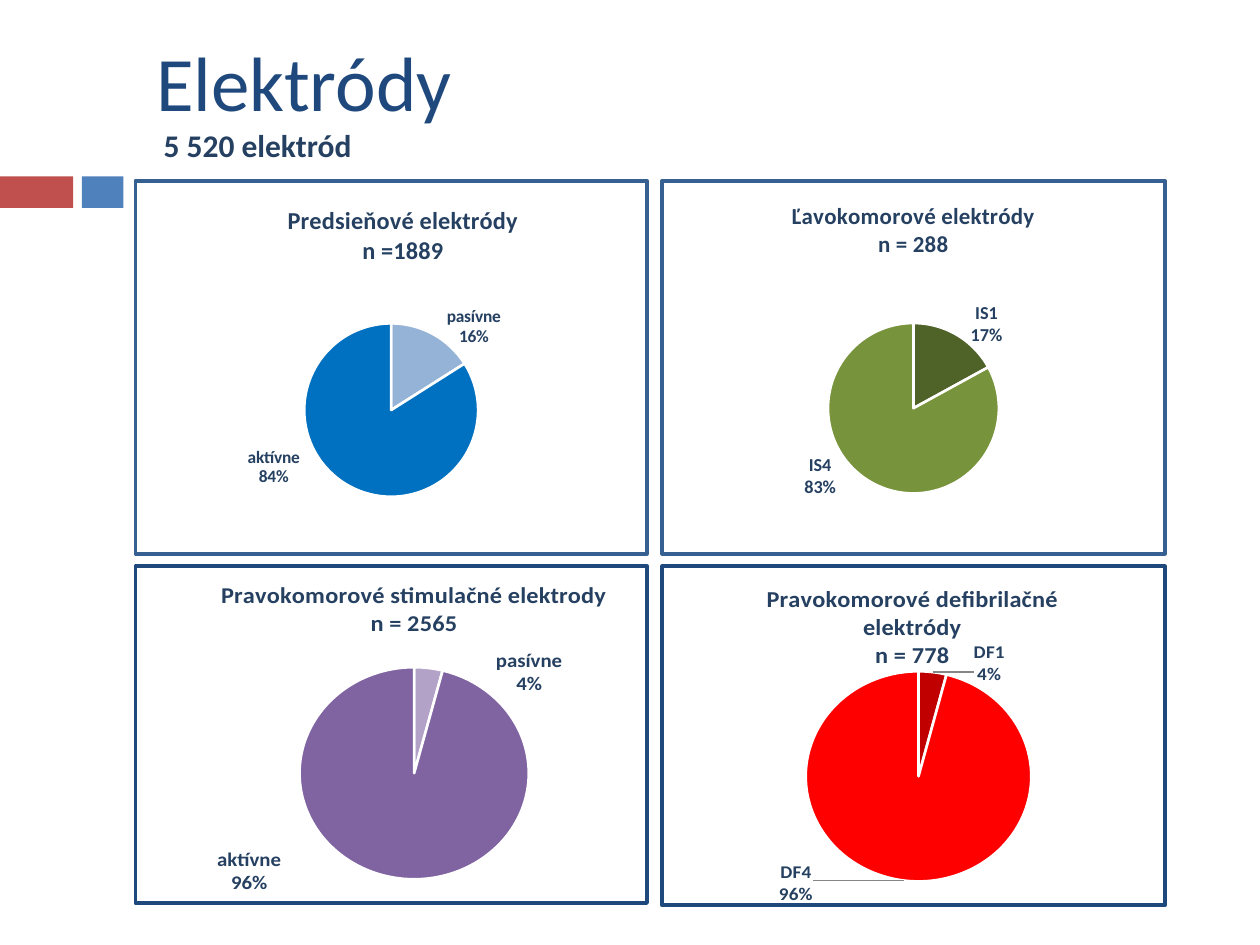
from dataclasses import dataclass

from pptx import Presentation
from pptx import util as u
from pptx.chart import data
from pptx.dml.color import RGBColor
from pptx.enum import chart as ec, shapes, text
from pptx.oxml import parse_xml
from pptx.oxml.ns import nsdecls

COLS, ROWS = 100, 75


@dataclass(frozen=True)
class Theme:
    font: str = "Calibri"
    title: str = "1F497D"
    ink: str = "254061"
    paper: str = "FFFFFF"
    red: str = "C0504D"
    blue: str = "4F81BD"
    lead: str = "868686"
    top: str = "376092"
    low: str = "1F497D"
    big: float = 44
    mid: float = 18
    head: float = 14
    small: float = 13.2
    edge: float = 2.25
    gap: float = 1.5


T = Theme()


def rgb(tone):
    return RGBColor.from_string(tone)


def place(box):
    x, y, w, h = box
    cell = u.Inches(0.1)
    return [int(n * cell) for n in (x, y, w, h)]


def style(font, size, tone=T.ink, bold=True):
    font.name = T.font
    font.size = u.Pt(size)
    font.bold = bold
    font.color.rgb = rgb(tone)


def write(slide, box, words, size, wrap=True, anchor=text.MSO_ANCHOR.TOP, **kind):
    frame = slide.shapes.add_textbox(*place(box)).text_frame
    frame.word_wrap = wrap
    frame.vertical_anchor = anchor
    run = frame.paragraphs[0].add_run()
    run.text = words
    style(run.font, size, **kind)


def block(slide, box, tone):
    shape = slide.shapes.add_shape(shapes.MSO_SHAPE.RECTANGLE, *place(box))
    shape.shadow.inherit = False
    shape.fill.solid()
    shape.fill.fore_color.rgb = rgb(tone)
    shape.line.fill.background()


def layout(x, y, w=None, h=None):
    size = "" if w is None else f'<c:w val="{w}"/><c:h val="{h}"/>'
    inner = '<c:layoutTarget val="inner"/>' if size else ""
    modes = '<c:xMode val="edge"/><c:yMode val="edge"/>'
    return parse_xml(
        f'<c:layout {nsdecls("c")}><c:manualLayout>{inner}{modes}'
        f'<c:x val="{x}"/><c:y val="{y}"/>{size}</c:manualLayout></c:layout>')


def arrange(part, rule):
    for old in part.xpath("c:layout"):
        part.remove(old)
    part.insert(1 if part.xpath("c:tx") else 0, rule)


def frame(chart, tone):
    border = parse_xml(
        f'<c:spPr {nsdecls("c", "a")}><a:solidFill><a:srgbClr val="{T.paper}"/></a:solidFill>'
        f'<a:ln w="{u.Pt(T.edge)}"><a:solidFill><a:srgbClr val="{tone}"/></a:solidFill>'
        '<a:round/></a:ln></c:spPr>')
    chart.element.xpath("c:txPr")[0].addprevious(border)


def label(series, size, moves, lead):
    marks = series.data_labels
    style(marks.font, size)
    marks.show_value = False
    marks.show_category_name = marks.show_percentage = True
    marks.position = ec.XL_LABEL_POSITION.OUTSIDE_END
    root = series._element.xpath("c:dLbls")[0]
    for old in root.xpath("c:showLeaderLines|c:separator"):
        root.remove(old)
    root.append(parse_xml(f'<c:separator {nsdecls("c")}>\n</c:separator>'))
    root.append(parse_xml(f'<c:showLeaderLines {nsdecls("c")} val="{int(lead)}"/>'))
    if lead:
        root.append(parse_xml(
            f'<c:leaderLines {nsdecls("c", "a")}><c:spPr><a:ln w="{u.Pt(0.75)}"><a:solidFill>'
            f'<a:srgbClr val="{T.lead}"/></a:solidFill></a:ln></c:spPr></c:leaderLines>'))
    flags = "".join(f'<c:show{key} val="{on}"/>' for key, on in (
        ("LegendKey", 0), ("Val", 0), ("CatName", 1),
        ("SerName", 0), ("Percent", 1), ("BubbleSize", 0)))
    for spot, (x, y) in enumerate(moves):
        root.insert(spot, parse_xml(
            f'<c:dLbl {nsdecls("c")}><c:idx val="{spot}"/><c:layout><c:manualLayout>'
            f'<c:x val="{x}"/><c:y val="{y}"/></c:manualLayout></c:layout>'
            f'<c:dLblPos val="outEnd"/>{flags}<c:separator>\n</c:separator></c:dLbl>'))


def pie(slide, box, title, names, values, tones, edge, size, head, plot,
        moves, lead=False, large=T.head):
    table = data.CategoryChartData()
    table.categories = names
    table.add_series("Series 1", values)
    chart = slide.shapes.add_chart(ec.XL_CHART_TYPE.PIE, *place(box), table).chart
    chart.has_legend = False
    style(chart.font, size)
    frame(chart, edge)
    chart.has_title = True
    words = chart.chart_title.text_frame
    words.text = title
    for line in words.paragraphs:
        for run in line.runs:
            style(run.font, large)
    arrange(chart.element.xpath("c:chart/c:title")[0], layout(*head))
    arrange(chart.element.xpath("c:chart/c:plotArea")[0], layout(*plot))
    chart.plots[0].vary_by_categories = True
    series = chart.plots[0].series[0]
    for spot, tone in enumerate(tones):
        form = series.points[spot].format
        form.fill.solid()
        form.fill.fore_color.rgb = rgb(tone)
        form.line.color.rgb = rgb(T.paper)
        form.line.width = u.Pt(T.gap)
    label(series, size, moves, lead)


def header(slide, box):
    x, y, w, h = box
    write(slide, (x, y, w, h), "Elektródy", T.big, tone=T.title, bold=False,
          anchor=text.MSO_ANCHOR.MIDDLE)
    write(slide, (x + 0.6, y + 8.2, 17.1, 4), "5 520 elektród", T.mid, wrap=False)


def band(slide, box):
    x, y, w, h = box
    block(slide, (x, y, 5.8, h), T.red)
    block(slide, (x + 6.5, y, w - 6.5, h), T.blue)
    block(slide, (x + 9.8, y - 0.1, w - 9.8, h + 1), T.paper)


def charts(slide, box):
    x, y, w, h = box
    left, right, upper, lower = 40.9, 40.2, 29.9, 29.1
    east, south = x + w - right, y + h - lower
    pair = ("pasívne", "aktívne")
    pie(slide, (x, y, left, upper), "Predsieňové elektródy\nn =1889",
        pair, (16, 84), ("95B3D7", "0070C0"), T.top, 10,
        (0.29, 0.05), (0.33, 0.38, 0.34, 0.47), ((0.02, 0.05), (-0.09, -0.12)))
    pie(slide, (east, y, right, upper), "Ľavokomorové elektródy\nn = 288",
        ("IS1", "IS4"), (17, 83), ("4F6228", "77933C"), T.top, 10.5,
        (0.25, 0.04), (0.33, 0.38, 0.34, 0.46), ((0.02, 0.05), (-0.06, -0.09)),
        large=T.small)
    pie(slide, (x, south, left, lower), "Pravokomorové stimulačné elektrody\nn = 2565",
        pair, (4, 96), ("B3A2C7", "8064A2"), T.low, 12,
        (0.16, 0.03), (0.31, 0.3, 0.47, 0.63), ((0.13, 0.1), (-0.23, -0.11)))
    pie(slide, (east, south, right, lower),
        "Pravokomorové defibrilačné elektródy\nn = 778",
        ("DF1", "DF4"), (4, 96), ("C00000", "FF0000"), T.low, 11,
        (0.2, 0.04), (0.28, 0.31, 0.46, 0.62), ((0.08, 0.06), (-0.18, -0.07)), True)


def main():
    deck = Presentation()
    deck.slide_width, deck.slide_height = place((COLS, ROWS, 0, 0))[:2]
    slide = deck.slides.add_slide(deck.slide_layouts[6])
    band(slide, (0, 14, COLS, 2.5))
    header(slide, (11.4, 1.3, 86, 10.2))
    charts(slide, (10.6, 14.2, 82, 59.7))
    deck.save("out.pptx")


if __name__ == "__main__":
    main()
